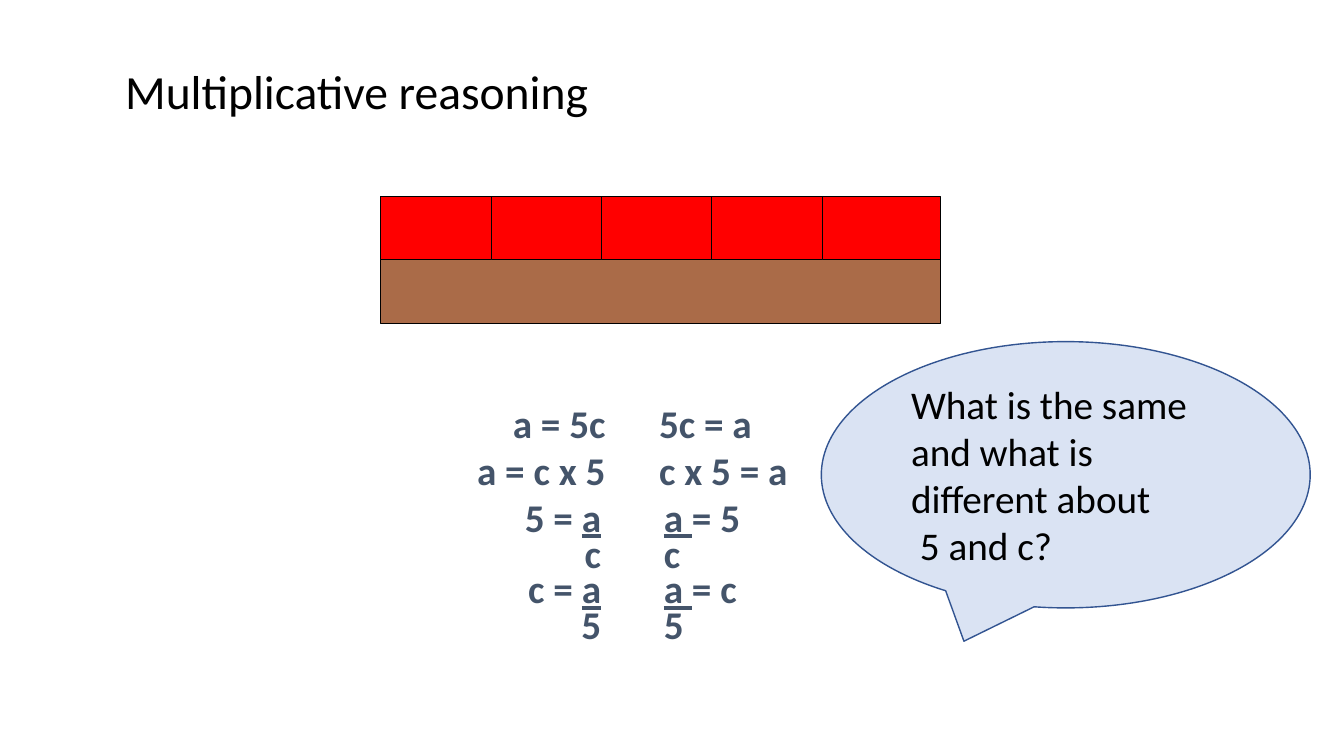
from dataclasses import dataclass

from lxml.etree import SubElement
from pptx import Presentation
from pptx.dml.color import RGBColor
from pptx.enum.shapes import MSO_SHAPE
from pptx.enum.text import MSO_ANCHOR, PP_ALIGN
from pptx.oxml.ns import qn
from pptx.shapes.autoshape import Shape
from pptx.text.text import TextFrame, _Paragraph
from pptx.util import Cm, Pt


@dataclass
class Box:
    left: float
    top: float
    width: float
    height: float

    def spans(self) -> list[int]:
        return [Cm(n) for n in (self.left, self.top, self.width, self.height)]


@dataclass
class Bar:
    box: Box
    fill: str


@dataclass
class Row:
    text: str  # parts between underscores are underlined
    tabs: tuple[float, float]
    space: float = 1.0


def hue(code: str) -> RGBColor:
    return RGBColor.from_string(code)


def write(frame: TextFrame, text: str, *, size: float = 28, color: str = "000000",
          bold: bool = False, space: float = 1.0, first: bool = False) -> _Paragraph:
    para = frame.paragraphs[0] if first else frame.add_paragraph()
    para.alignment = PP_ALIGN.LEFT
    para.line_spacing = space
    for i, part in enumerate(text.split("_")):
        if not part:
            continue
        run = para.add_run()
        run.text = part
        font = run.font
        font.name, font.size, font.bold = "Calibri", Pt(size), bold
        font.underline = i % 2 == 1
        font.color.rgb = hue(color)
    return para


def set_tabs(para: _Paragraph, tabs: tuple[float, float]) -> None:
    stops = SubElement(para._p.get_or_add_pPr(), qn("a:tabLst"))
    for pos, side in zip(tabs, ("r", "l")):
        SubElement(stops, qn("a:tab"), pos=str(Cm(pos)), algn=side)


def paint(shape: Shape, fill: str, line: str, width: float) -> None:
    shape.shadow.inherit = False
    shape.fill.solid()
    shape.fill.fore_color.rgb = hue(fill)
    shape.line.color.rgb = hue(line)
    shape.line.width = Pt(width)


def add_text(shapes, box: Box) -> TextFrame:
    frame = shapes.add_textbox(*box.spans()).text_frame
    frame.word_wrap = True
    return frame


# Bar model: one long bar under five short ones
LEFT, TOP, HIGH, STEP = 9.6, 4.95, 1.6, 2.78
BARS = [Bar(Box(LEFT, TOP + HIGH, 14.1, HIGH), "AA6B48")] + [
    Bar(Box(LEFT + i * STEP, TOP, 2.98 if i == 4 else 2.84, HIGH), "FF0000")
    for i in range(5)
]

# Equations, mirrored about the gap between the two tab stops
WIDE, SLIM = (5.3, 6.88), (5.41, 6.76)
ROWS = [
    Row("\ta = 5c\t5c = a", SLIM),
    Row("\ta = c x 5\tc x 5 = a", SLIM),
    Row("\t5 = _a_\t_a _= 5", WIDE),
    Row("\tc\tc", WIDE, 0.75),
    Row("\tc = _a_\t_a _= c", WIDE, 0.75),
    Row("\t5\t5", WIDE, 0.75),
]


def main() -> None:
    deck = Presentation()
    deck.slide_width, deck.slide_height = Cm(33.87), Cm(19.05)
    slide = deck.slides.add_slide(deck.slide_layouts[5])
    shapes = slide.shapes

    # Title
    title = shapes.title
    title.left, title.top, title.width, title.height = Box(2.9, 1.32, 21.79, 2.11).spans()
    title.text_frame.vertical_anchor = MSO_ANCHOR.MIDDLE
    write(title.text_frame, "Multiplicative reasoning", size=34, space=0.9, first=True)

    # Equations
    frame = add_text(shapes, Box(9.6, 9.93, 12.7, 6.8))
    for i, row in enumerate(ROWS):
        para = write(frame, row.text, color="44546A", bold=True,
                     space=row.space, first=i == 0)
        set_tabs(para, row.tabs)

    # Bars
    group = shapes.add_group_shape()
    for bar in BARS:
        rect = group.shapes.add_shape(MSO_SHAPE.RECTANGLE, *bar.box.spans())
        paint(rect, bar.fill, "000000", 0.75)

    # Speech bubble and its question
    bubble = shapes.add_shape(MSO_SHAPE.OVAL_CALLOUT, *Box(20.7, 8.61, 12.32, 6.71).spans())
    paint(bubble, "DAE3F3", "325491", 1)
    frame = add_text(shapes, Box(22.71, 9.45, 8.05, 5.05))
    write(frame, "What is the same and what is different about", first=True)
    write(frame, " 5 and c?")

    deck.save("out.pptx")


if __name__ == "__main__":
    main()
